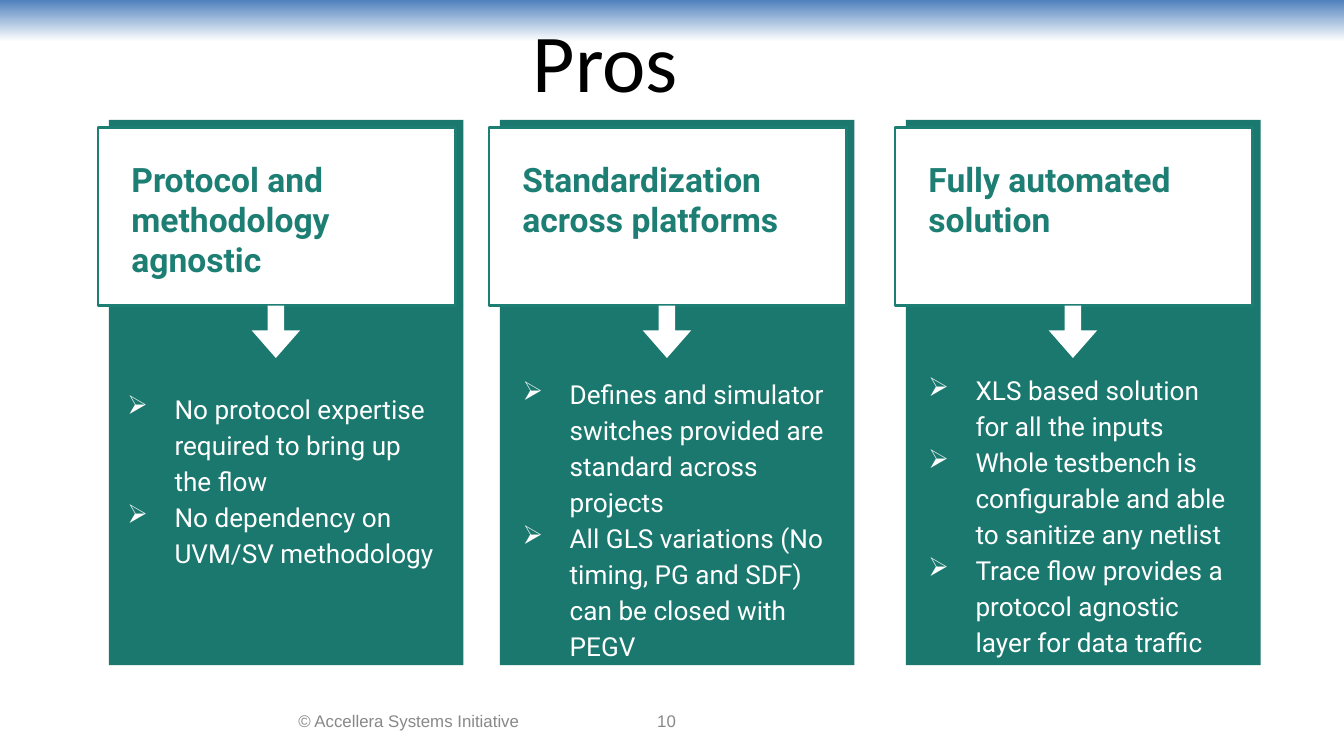
from lxml.etree import SubElement
from pptx import Presentation
from pptx.dml.color import RGBColor
from pptx.enum.shapes import MSO_SHAPE as Preset
from pptx.enum.text import MSO_ANCHOR as Anchor, MSO_AUTO_SIZE as AutoSize, PP_ALIGN as Align
from pptx.oxml.ns import qn
from pptx.util import Pt

WHITE = RGBColor(0xFF, 0xFF, 0xFF)
BLACK = RGBColor(0, 0, 0)
BLUE = RGBColor(0x4F, 0x81, 0xBD)
PANEL_GREEN = RGBColor(0x1B, 0x78, 0x6E)
HEADER_GREEN = RGBColor(0x1D, 0x7E, 0x74)
GREY = RGBColor(0x88, 0x88, 0x88)

# panel left, bullets left, bullets top, heading, bullets
COLUMNS = [
    (58.3, 50.4, 200.9, "Protocol and methodology agnostic",
     ["No protocol expertise required to bring up the flow",
      "No dependency on UVM/SV methodology"]),
    (267.8, 262.1, 193, "Standardization across platforms",
     ["Defines and simulator switches provided are standard across projects",
      "All GLS variations (No timing, PG and SDF) can be closed with PEGV"]),
    (485.3, 479.5, 190.8, "Fully automated solution",
     ["XLS based solution for all the inputs",
      "Whole testbench is configurable and able to sanitize any netlist",
      "Trace flow provides a protocol agnostic layer for data traffic"]),
]


def add_shape(slide, preset, left, top, width, height, fill=None, line=None):
    shape = slide.shapes.add_shape(preset, Pt(left), Pt(top), Pt(width), Pt(height))
    shape.shadow.inherit = False
    if fill is not None:
        shape.fill.solid()
        shape.fill.fore_color.rgb = fill
    if line is None:
        shape.line.fill.background()
    else:
        shape.line.color.rgb = line
        shape.line.width = Pt(1.5)
    return shape


def set_margins(frame, horizontal, vertical):
    frame.margin_left = frame.margin_right = Pt(horizontal)
    frame.margin_top = frame.margin_bottom = Pt(vertical)


def set_font(paragraph, name, size, color, bold=False):
    font = paragraph.font
    font.name, font.size, font.bold = name, Pt(size), bold
    font.color.rgb = color


def add_text_frame(slide, left, top, width, height, margins=(7.2, 7.2)):
    box = slide.shapes.add_textbox(Pt(left), Pt(top), Pt(width), Pt(height))
    frame = box.text_frame
    frame.word_wrap = True
    set_margins(frame, *margins)
    return frame


def add_title(slide, text):
    title = slide.shapes.title
    title.left, title.top, title.width, title.height = Pt(156.2), Pt(0), Pt(336.2), Pt(64)
    frame = title.text_frame
    frame.text = text
    frame.auto_size = AutoSize.NONE
    frame.vertical_anchor = Anchor.MIDDLE
    set_margins(frame, 7.2, 3.6)
    paragraph = frame.paragraphs[0]
    paragraph.alignment = Align.CENTER
    set_font(paragraph, "Calibri", 44, BLACK)


def add_top_band(slide):
    """Add the gradient band behind the title."""
    band = add_shape(slide, Preset.RECTANGLE, 0, 0, 720, 22.3)
    band.fill.gradient()
    band.fill.gradient_angle = 270
    for stop, color in zip(band.fill.gradient_stops, (BLUE, WHITE)):
        stop.color.rgb = color
    slide.shapes.title._element.addprevious(band._element)


def add_footer(slide, left, width, text):
    frame = add_text_frame(slide, left, 375.1, width, 21.6, (5, 2.9))
    frame.vertical_anchor = Anchor.MIDDLE
    paragraph = frame.paragraphs[0]
    paragraph.text = text
    paragraph.alignment = Align.CENTER
    set_font(paragraph, "Arial", 9, GREY)


def add_bullet_mark(paragraph):
    properties = paragraph._p.get_or_add_pPr()
    properties.set("marL", str(Pt(36)))
    properties.set("indent", str(-Pt(25.2)))
    color = SubElement(properties, qn("a:buClr"))
    SubElement(color, qn("a:srgbClr"), val=str(WHITE))
    SubElement(properties, qn("a:buChar"), char="➢")


def add_bullets(slide, left, top, items):
    frame = add_text_frame(slide, left, top, 190, 77.8)
    for index, item in enumerate(items):
        paragraph = frame.add_paragraph() if index else frame.paragraphs[0]
        paragraph.text = item
        add_bullet_mark(paragraph)
        paragraph.line_spacing = 1.15
        set_font(paragraph, "Roboto", 14, WHITE)


def add_column(slide, left, bullets_left, bullets_top, heading, items):
    add_shape(slide, Preset.RECTANGLE, left, 64.2, 190, 292.2, PANEL_GREEN)
    add_shape(slide, Preset.RECTANGLE, left - 5.8, 68.3, 191.7, 95.6, WHITE, HEADER_GREEN)
    frame = add_text_frame(slide, left + 5, 77.8, 170, 86.4)
    paragraph = frame.paragraphs[0]
    paragraph.text = heading
    set_font(paragraph, "Roboto", 18, HEADER_GREEN, bold=True)
    arrow = add_shape(slide, Preset.DOWN_ARROW, left + 76.5, 163.8, 26, 28, WHITE)
    arrow.adjustments[0], arrow.adjustments[1] = 0.34, 0.57
    add_bullets(slide, bullets_left, bullets_top, items)


def main():
    presentation = Presentation()
    presentation.slide_width, presentation.slide_height = Pt(720), Pt(405)
    slide = presentation.slides.add_slide(presentation.slide_layouts[5])
    add_title(slide, "Pros")
    add_top_band(slide)
    for column in COLUMNS:
        add_column(slide, *column)
    add_footer(slide, 131.8, 174.2, "© Accellera Systems Initiative")
    add_footer(slide, 288, 138.2, "10")
    presentation.save("out.pptx")


if __name__ == "__main__":
    main()
